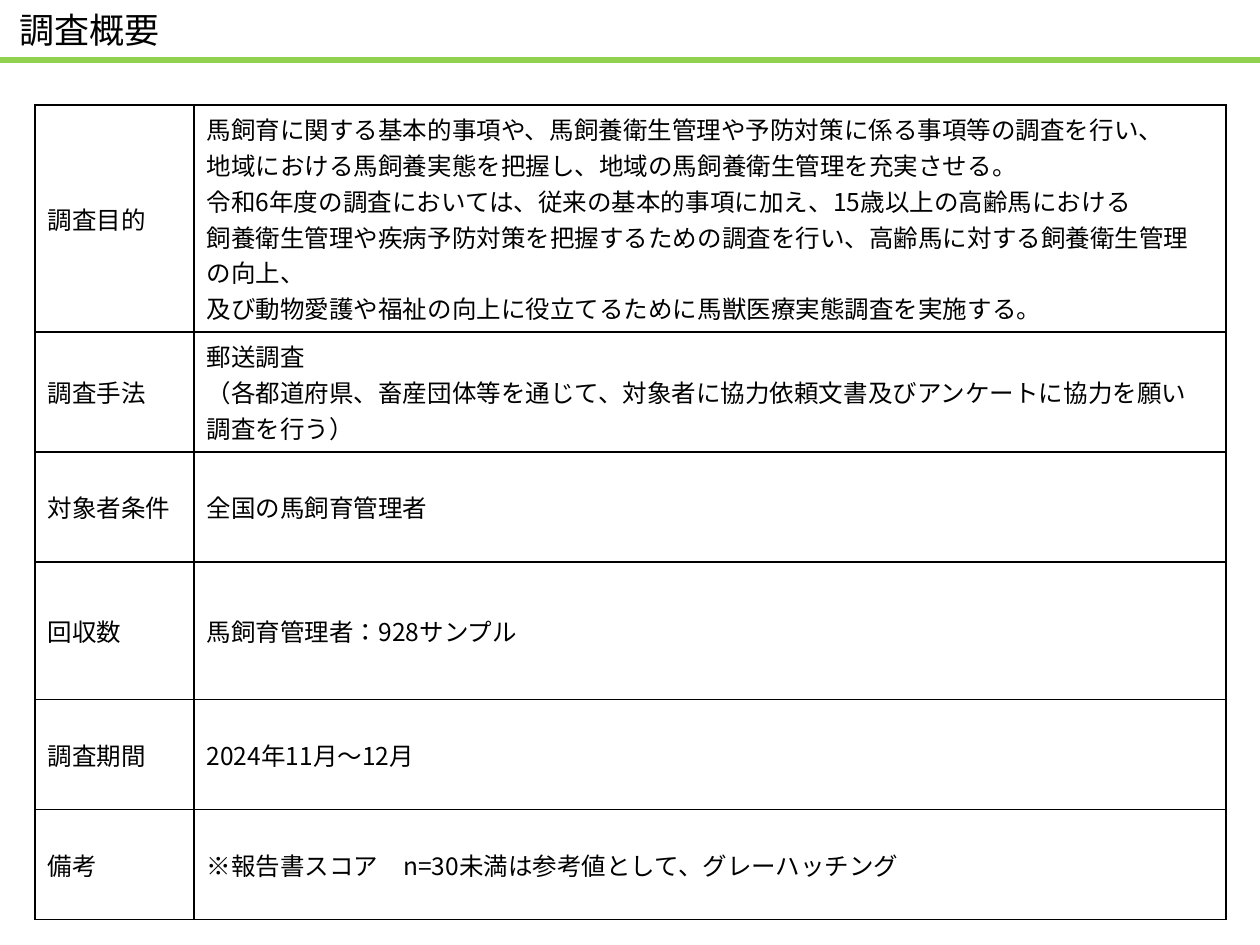
from copy import deepcopy

from lxml import etree
from pptx import Presentation
from pptx import util as u
from pptx.dml.color import RGBColor
from pptx.enum import lang, shapes, text
from pptx.oxml import ns

EMU_PER_PX = 914400 // 126
FONT = "Noto Sans CJK JP"
BLACK = RGBColor(0x00, 0x00, 0x00)
WHITE = RGBColor(0xFF, 0xFF, 0xFF)
GREEN = RGBColor(0x92, 0xD0, 0x50)

COLUMN_WIDTHS = [159, 1032]
ROWS = [
    (227, "調査目的",
     "馬飼育に関する基本的事項や、馬飼養衛生管理や予防対策に係る事項等の調査を行い、\n"
     "地域における馬飼養実態を把握し、地域の馬飼養衛生管理を充実させる。\n"
     "令和6年度の調査においては、従来の基本的事項に加え、15歳以上の高齢馬における\n"
     "飼養衛生管理や疾病予防対策を把握するための調査を行い、高齢馬に対する飼養衛生管理の向上、\n"
     "及び動物愛護や福祉の向上に役立てるために馬獣医療実態調査を実施する。"),
    (120, "調査手法",
     "郵送調査\n"
     "（各都道府県、畜産団体等を通じて、対象者に協力依頼文書及びアンケートに協力を願い\n"
     "調査を行う）"),
    (110, "対象者条件", "全国の馬飼育管理者"),
    (138, "回収数", "馬飼育管理者：928サンプル"),
    (110, "調査期間", "2024年11月～12月"),
    (110, "備考", "※報告書スコア　n=30未満は参考値として、グレーハッチング"),
]


def px(length):
    return u.Emu(length * EMU_PER_PX)


def write_text(frame, content, *, size, color=BLACK):
    frame.word_wrap = True
    para = frame.paragraphs[0]
    para.text = content
    for span in para.runs:
        span.font.size = u.Pt(size)
        span.font.name = FONT
        span.font.color.rgb = color
        span.font.language_id = lang.MSO_LANGUAGE_ID.JAPANESE
        east_asian = etree.SubElement(span.font._element, ns.qn("a:ea"))
        east_asian.set("typeface", FONT)
    # Line breaks take the text format too, so that line heights agree
    for line_break in para._p.findall(ns.qn("a:br")):
        line_break.append(deepcopy(para.runs[0].font._element))


def add_title(page, content):
    box = page.shapes.add_textbox(px(7), px(1), px(1134), px(56))
    box.text_frame.vertical_anchor = text.MSO_ANCHOR.MIDDLE
    write_text(box.text_frame, content, size=20)


def add_rule(page, y, *, width, color):
    rule = page.shapes.add_connector(
        shapes.MSO_CONNECTOR.STRAIGHT, 0, px(y), px(1260), px(y))
    rule.line.width = u.Pt(width)
    rule.line.color.rgb = color
    etree.SubElement(rule._element.spPr, ns.qn("a:effectLst"))


def set_borders(cell, *, width, color):
    properties = cell._tc.get_or_add_tcPr()
    for position, side in enumerate(("lnL", "lnR", "lnT", "lnB")):
        line = etree.Element(ns.qn(f"a:{side}"), w=str(u.Pt(width)))
        fill = etree.SubElement(line, ns.qn("a:solidFill"))
        etree.SubElement(fill, ns.qn("a:srgbClr"), val=str(color))
        properties.insert(position, line)


def add_overview_table(page):
    heights = [height for height, _, _ in ROWS]
    table = page.shapes.add_table(
        len(ROWS), len(COLUMN_WIDTHS), px(35), px(105),
        px(sum(COLUMN_WIDTHS)), px(sum(heights))).table
    table.first_row = False
    table.horz_banding = False
    for column, width in zip(table.columns, COLUMN_WIDTHS):
        column.width = px(width)
    for row, (height, *contents) in zip(table.rows, ROWS):
        row.height = px(height)
        for cell, content in zip(row.cells, contents):
            cell.vertical_anchor = text.MSO_ANCHOR.MIDDLE
            cell.fill.solid()
            cell.fill.fore_color.rgb = WHITE
            set_borders(cell, width=0.75, color=BLACK)
            write_text(cell.text_frame, content, size=14)


def main():
    deck = Presentation()
    deck.slide_width = px(1260)
    deck.slide_height = px(945)
    page = deck.slides.add_slide(deck.slide_layouts[6])

    # Heading with its green rule
    add_rule(page, 60, width=3, color=GREEN)
    add_title(page, "調査概要")

    # Survey overview
    add_overview_table(page)

    deck.save("out.pptx")


if __name__ == "__main__":
    main()
